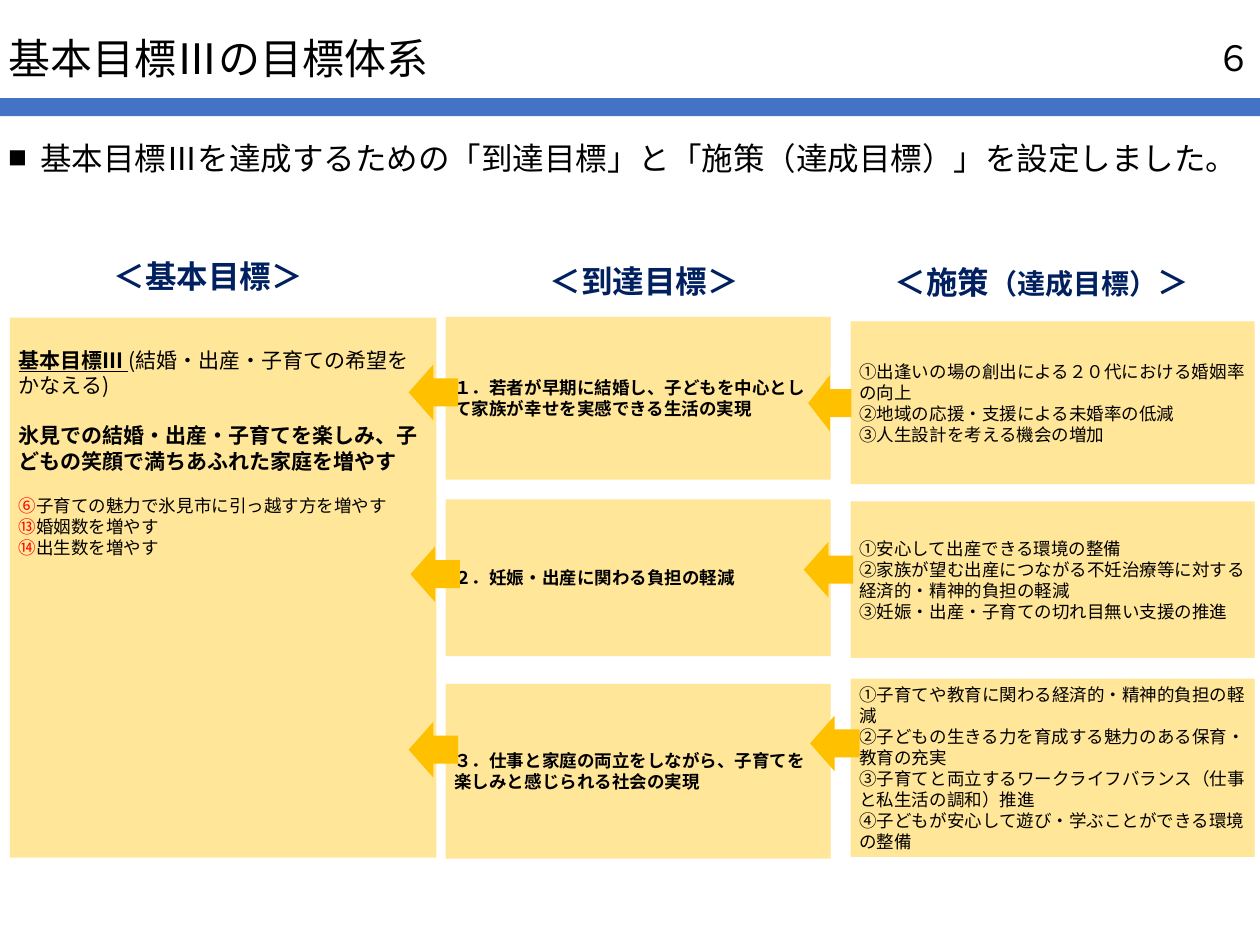
from lxml.etree import SubElement
from pptx import Presentation
from pptx.dml.color import RGBColor
from pptx.enum.shapes import MSO_SHAPE
from pptx.enum.text import MSO_ANCHOR, PP_ALIGN
from pptx.oxml.ns import qn
from pptx.util import Inches, Pt

FONT = "Noto Sans CJK JP"
BLACK, NAVY, RED = "000000", "002060", "FF0000"
BLUE, CREAM, AMBER = "4472C4", "FFE699", "FFC000"

deck = Presentation()
deck.slide_width, deck.slide_height = Inches(14), Inches(10.5)
column, row = deck.slide_width / 14, deck.slide_height / 10.5
slide = deck.slides.add_slide(deck.slide_layouts[6])


def colour(target, value):
    if hasattr(target, "solid"):
        target.solid()
        target = target.fore_color
    else:
        target = target.color
    target.rgb = RGBColor.from_string(value)


def write(shape, paragraphs, anchor=MSO_ANCHOR.MIDDLE, align=PP_ALIGN.LEFT):
    frame = shape.text_frame
    frame.word_wrap = True
    frame.vertical_anchor = anchor
    for index, (gap, runs) in enumerate(paragraphs):
        paragraph = frame.paragraphs[0] if index == 0 else frame.add_paragraph()
        paragraph.alignment = align
        paragraph.line_spacing = Pt(round(1.2 * max(size for _, size, _, _ in runs), 1))
        paragraph.space_before = Pt(gap)
        for text, size, ink, style in runs:
            run = paragraph.add_run()
            run.text = text
            run.font.size = Pt(size)
            run.font.name = FONT
            run.font.bold = "b" in style
            run.font.underline = "u" in style
            colour(run.font, ink)
            SubElement(run.font._element, qn("a:ea"), typeface=FONT)


blocks = [
    (MSO_SHAPE.RECTANGLE, BLUE, 0, 1.09, 14, 0.2, []),
    (MSO_SHAPE.RECTANGLE, CREAM, 0.11, 3.53, 4.74, 6, []),
]
goals = [
    (3.52, 1.81, "１．若者が早期に結婚し、子どもを中心として家族が幸せを実感できる生活の実現"),
    (5.55, 1.74, "２．妊娠・出産に関わる負担の軽減"),
    (7.6, 1.94, "３．仕事と家庭の両立をしながら、子育てを楽しみと感じられる社会の実現"),
]
measures = [
    (3.57, 1.81, [
        "①出逢いの場の創出による２０代における婚姻率の向上",
        "②地域の応援・支援による未婚率の低減",
        "③人生設計を考える機会の増加",
    ]),
    (5.57, 1.74, [
        "①安心して出産できる環境の整備",
        "②家族が望む出産につながる不妊治療等に対する経済的・精神的負担の軽減",
        "③妊娠・出産・子育ての切れ目無い支援の推進",
    ]),
    (7.54, 1.98, [
        "①子育てや教育に関わる経済的・精神的負担の軽減",
        "②子どもの生きる力を育成する魅力のある保育・教育の充実",
        "③子育てと両立するワークライフバランス（仕事と私生活の調和）推進",
        "④子どもが安心して遊び・学ぶことができる環境の整備",
    ]),
]
for top, height, goal in goals:
    blocks.append((MSO_SHAPE.RECTANGLE, CREAM, 4.95, top, 4.28, height,
                   [(0, [(goal, 14, BLACK, "b")])]))
for top, height, lines in measures:
    blocks.append((MSO_SHAPE.RECTANGLE, CREAM, 9.45, top, 4.49, height,
                   [(0, [(line, 14, BLACK, "")]) for line in lines]))
for left, top, width in [(4.54, 4.05, 0.55), (4.56, 6.07, 0.55), (4.54, 8.02, 0.55),
                         (8.98, 4.17, 0.48), (8.93, 6.02, 0.55), (9, 7.95, 0.55)]:
    blocks.append((MSO_SHAPE.LEFT_ARROW, AMBER, left, top, width, 0.62, []))

drawn = []
for kind, fill, left, top, width, height, paragraphs in blocks:
    block = slide.shapes.add_shape(kind, int(left * column), int(top * row),
                                   int(width * column), int(height * row))
    block.shadow.inherit = False
    colour(block.fill, fill)
    block.line.fill.background()
    write(block, paragraphs)
    drawn.append(block)

basic_goal = drawn[1]
basic_goal.text_frame.margin_top = int(0.33 * row)
indicators = [
    (17, "⑥", "子育ての魅力で氷見市に引っ越す方を増やす"),
    (0, "⑬", "婚姻数を増やす"),
    (0, "⑭", "出生数を増やす"),
]
write(basic_goal, [
    (0, [("基本目標Ⅲ ", 16.8, BLACK, "bu"),
         ("(結婚・出産・子育ての希望をかなえる)", 16.8, BLACK, "")]),
    (20, [("氷見での結婚・出産・子育てを楽しみ、子どもの笑顔で満ちあふれた家庭を増やす",
           16.8, BLACK, "b")]),
] + [(gap, [(number, 14, RED, ""), (text, 14, BLACK, "")])
     for gap, number, text in indicators], MSO_ANCHOR.TOP)

labels = [
    (0, 0.44, 14, 0.4, PP_ALIGN.LEFT, [("基本目標Ⅲの目標体系", 33.6, BLACK, "")]),
    (10.85, 0.36, 3.15, 0.56, PP_ALIGN.RIGHT, [("６", 28, BLACK, "")]),
    (0.07, 2.73, 4.49, 0.67, PP_ALIGN.CENTER, [("＜基本目標＞", 25.2, NAVY, "b")]),
    (5.02, 2.79, 4.28, 0.67, PP_ALIGN.CENTER, [("＜到達目標＞", 25.2, NAVY, "b")]),
    (9.33, 2.8, 4.49, 0.67, PP_ALIGN.CENTER,
     [("＜施策", 25.2, NAVY, "b"), ("（達成目標）", 22.4, NAVY, "b"), ("＞", 25.2, NAVY, "b")]),
    (0, 1.5, 14, 0.5, PP_ALIGN.LEFT,
     [("基本目標Ⅲを達成するための「到達目標」と「施策（達成目標）」を設定しました。",
       25.2, BLACK, "")]),
]
for left, top, width, height, align, runs in labels:
    label = slide.shapes.add_textbox(int(left * column), int(top * row),
                                     int(width * column), int(height * row))
    write(label, [(0, runs)], align=align)

lead = label.text_frame.paragraphs[0]._p.get_or_add_pPr()
lead.set("marL", str(int(0.35 * column)))
lead.set("indent", str(int(-0.35 * column)))
SubElement(lead, qn("a:buSzPct"), val="60000")
SubElement(lead, qn("a:buFont"), typeface=FONT)
SubElement(lead, qn("a:buChar"), char="■")

deck.save("out.pptx")
